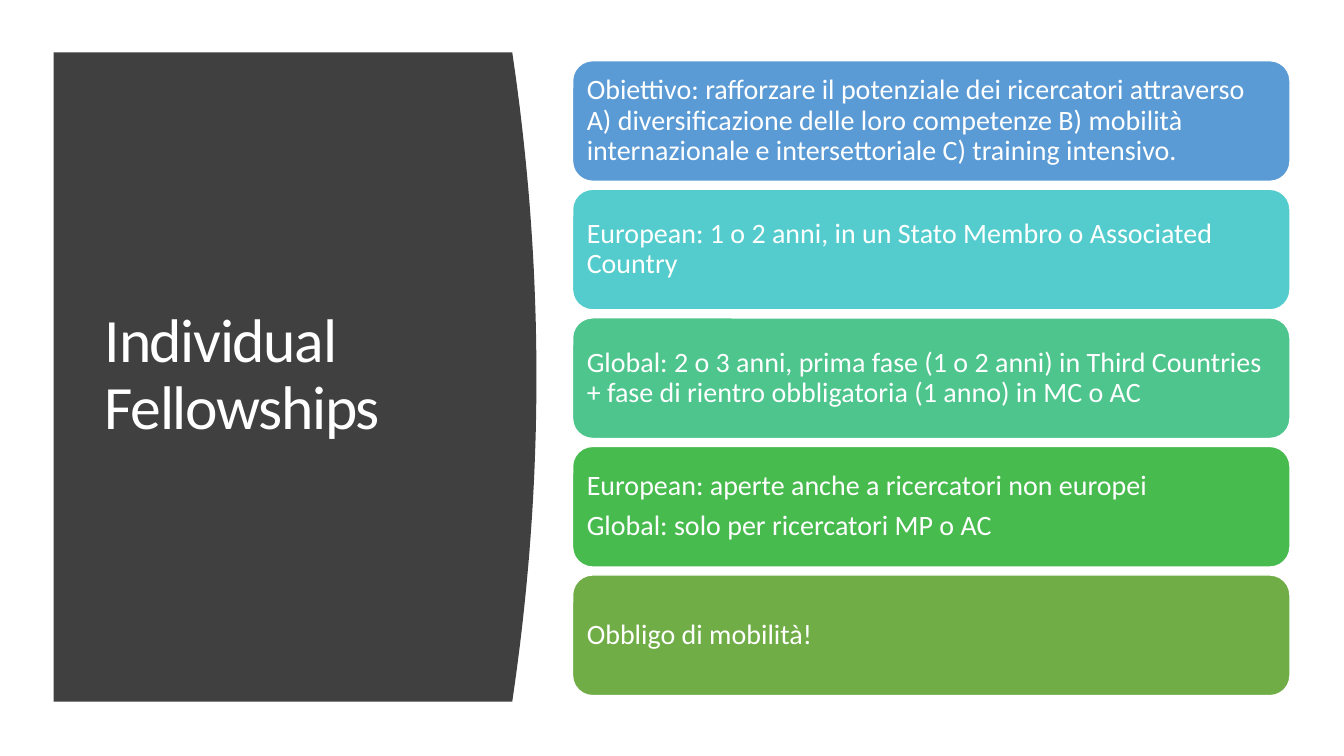
from dataclasses import dataclass

from pptx import Presentation
from pptx.dml.color import RGBColor
from pptx.enum.shapes import MSO_SHAPE
from pptx.enum.text import MSO_ANCHOR, MSO_AUTO_SIZE, PP_ALIGN
from pptx.util import Cm, Pt

TITLE = "Individual Fellowships"
CARDS = [
    ("5B9BD5", ["Obiettivo: rafforzare il potenziale dei ricercatori attraverso "
                "A) diversificazione delle loro competenze B) mobilità "
                "internazionale e intersettoriale C) training intensivo."]),
    ("54CCCD", ["European: 1 o 2 anni, in un Stato Membro o Associated Country"]),
    ("4DC58D", ["Global: 2 o 3 anni, prima fase (1 o 2 anni) in Third Countries "
                "+ fase di rientro obbligatoria (1 anno) in MC o AC"]),
    ("48BB4F", ["European: aperte anche a ricercatori non europei",
                "Global: solo per ricercatori MP o AC"]),
    ("70AD47", ["Obbligo di mobilità!"]),
]


@dataclass(frozen=True)
class Theme:
    font: str = "Calibri"
    white: str = "FFFFFF"
    panel: str = "404040"
    head: int = 44
    body: int = 20


THEME = Theme()


def paint(fill, color):
    fill.solid()
    fill.fore_color.rgb = RGBColor.from_string(color)


def write(frame, lines, size, after=0):
    frame.word_wrap = True
    frame.auto_size = MSO_AUTO_SIZE.NONE
    frame.vertical_anchor = MSO_ANCHOR.MIDDLE
    for i, line in enumerate(lines):
        para = frame.add_paragraph() if i else frame.paragraphs[0]
        para.alignment = PP_ALIGN.LEFT
        para.line_spacing = 0.9
        para.space_after = Pt(after)
        run = para.add_run()
        run.text = line
        run.font.name = THEME.font
        run.font.size = Pt(size)
        run.font.color.rgb = RGBColor.from_string(THEME.white)


def add_panel(slide):
    """Draw the dark panel; its right edge bulges as a parabola."""
    left, top, width, height, bulge = 1.35, 1.32, 11.56, 16.36, 0.61
    steps = 48
    edge = []
    for i in range(steps + 1):
        t = i / steps
        x = left + width + bulge * 4 * t * (1 - t)
        edge.append((Cm(x), Cm(top + height * t)))
    pen = slide.shapes.build_freeform(Cm(left), Cm(top))
    pen.add_line_segments(edge + [(Cm(left), Cm(top + height))], close=True)
    panel = pen.convert_to_shape()
    panel.shadow.inherit = False
    paint(panel.fill, THEME.panel)
    panel.line.fill.background()


def add_title(slide):
    title = slide.shapes.title
    title.left, title.top = Cm(2.39), Cm(2.82)
    title.width, title.height = Cm(9.5), Cm(13.31)
    write(title.text_frame, [TITLE], THEME.head)
    run = title.text_frame.paragraphs[0].runs[0]
    run.font._element.set("spc", "-100")
    # The title stands in front of the panel
    slide.shapes._spTree.append(title._element)


def add_cards(slide):
    left, top, width, height, gap = 14.43, 1.53, 18.08, 3.04, 0.2
    for i, (color, lines) in enumerate(CARDS):
        card = slide.shapes.add_shape(
            MSO_SHAPE.ROUNDED_RECTANGLE, Cm(left), Cm(top + i * (height + gap)),
            Cm(width), Cm(height))
        card.shadow.inherit = False
        paint(card.fill, color)
        paint(card.line.fill, THEME.white)
        card.line.width = Pt(1)
        frame = card.text_frame
        frame.margin_left = frame.margin_right = Cm(0.21)
        frame.margin_top = frame.margin_bottom = Cm(0.21)
        write(frame, lines, THEME.body, after=7)


def main():
    deck = Presentation()
    deck.slide_width, deck.slide_height = Cm(33.87), Cm(19.05)
    slide = deck.slides.add_slide(deck.slide_layouts[5])
    add_panel(slide)
    add_title(slide)
    add_cards(slide)
    deck.save("out.pptx")


if __name__ == "__main__":
    main()
